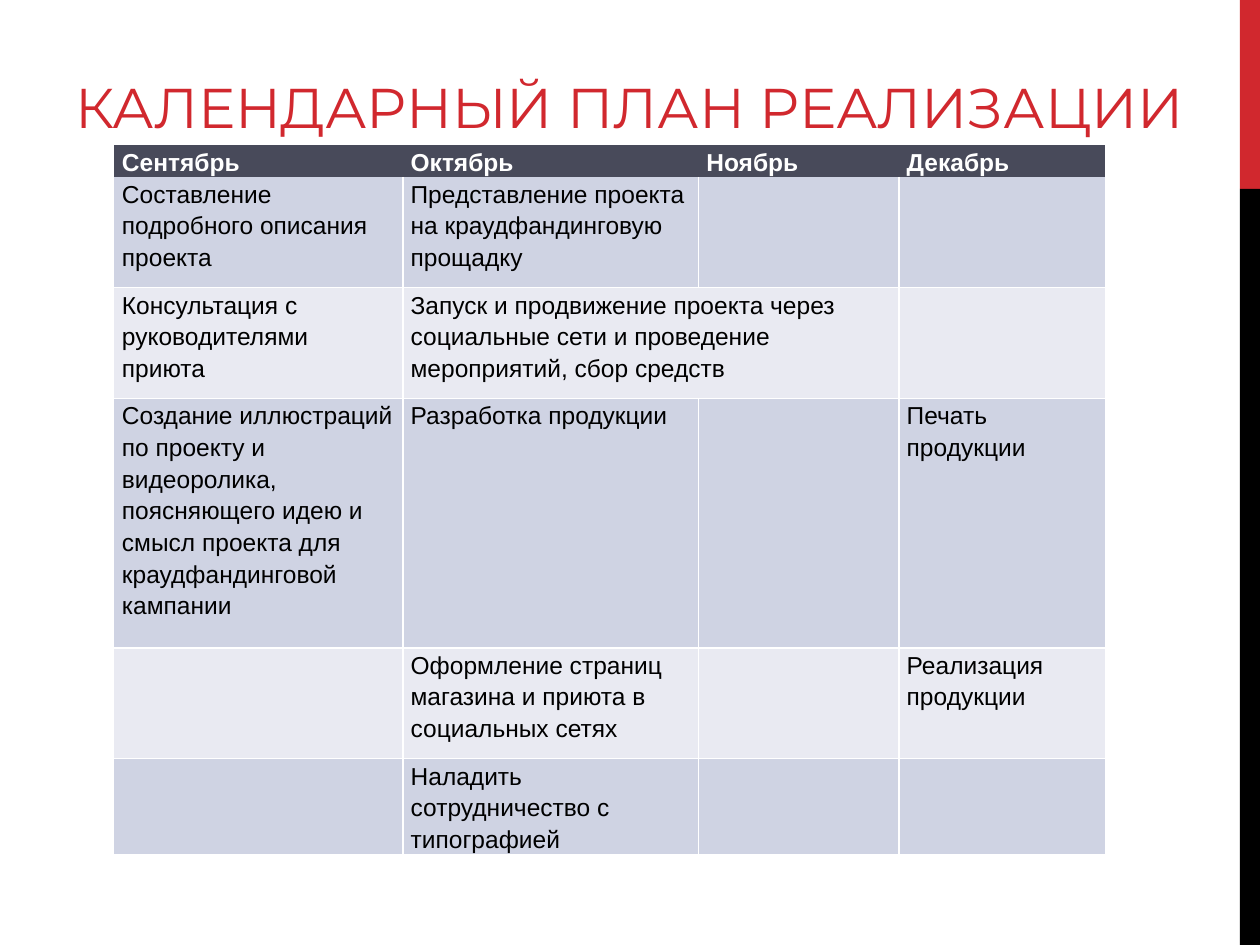
import pptx
import pptx.dml.color
import pptx.enum.shapes
import pptx.enum.text
import pptx.oxml
import pptx.oxml.ns
import pptx.util

Pt = pptx.util.Pt
Rgb = pptx.dml.color.RGBColor.from_string
Enum = pptx.enum.text

THEME = {
    "red": "D1282E", "black": "000000", "white": "FFFFFF",
    "head": "484A5A", "bands": ("CFD3E3", "E9EAF2"),
    "title": {"name": "Montserrat", "size": Pt(32), "bold": False},
    "top": {"name": "Arial", "size": Pt(14), "bold": True},
    "body": {"name": "Arial", "size": Pt(14), "bold": False},
}
PLAIN = "{2D5ABB26-0587-4C30-8999-92F81FD0307C}"  # table style without grid

COLS = (165, 169, 114.5, 118)
ROWS = (18.3, 63.3, 63.3, 142.6, 63.3, 54.3)
PLAN = (
    ("Сентябрь", "Октябрь", "Ноябрь", "Декабрь"),
    ("Составление подробного описания проекта",
     "Представление проекта на краудфандинговую прощадку", "", ""),
    ("Консультация с руководителями приюта",
     "Запуск и продвижение проекта через социальные сети и проведение "
     "мероприятий, сбор средств", "", ""),
    ("Создание иллюстраций по проекту и видеоролика, поясняющего идею и "
     "смысл проекта для краудфандинговой кампании",
     "Разработка продукции", "", "Печать продукции"),
    ("", "Оформление страниц магазина и приюта в социальных сетях", "",
     "Реализация продукции"),
    ("", "Наладить сотрудничество с типографией", "", ""),
)


def put(item, form):
    for key, value in form.items():
        setattr(item, key, value)


class Page:
    def __init__(self, slide, theme):
        self.slide, self.theme = slide, theme

    def label(self, frame, text, font, color, form):
        par = frame.paragraphs[0]
        put(par, form)
        run = par.add_run()
        run.text = text
        put(run.font, self.theme[font])
        run.font.color.rgb = Rgb(self.theme[color])

    def block(self, box, color):
        kind = pptx.enum.shapes.MSO_SHAPE.RECTANGLE
        shape = self.slide.shapes.add_shape(kind, *map(Pt, box))
        shape.shadow.inherit = False
        shape.fill.solid()
        shape.fill.fore_color.rgb = Rgb(self.theme[color])
        shape.line.fill.background()

    def title(self, box, text):
        frame = self.slide.shapes.add_textbox(*map(Pt, box)).text_frame
        put(frame, {"word_wrap": True,
                    "vertical_anchor": Enum.MSO_ANCHOR.BOTTOM})
        self.label(frame, text, "title", "red",
                   {"alignment": Enum.PP_ALIGN.CENTER})

    def edge(self, cell, sides):
        props = cell._tc.get_or_add_tcPr()
        for spot, side in enumerate(sides):
            line = pptx.oxml.parse_xml(
                f'<a:ln{side} {pptx.oxml.ns.nsdecls("a")} w="{Pt(1)}">'
                f'<a:solidFill><a:srgbClr val="{self.theme["white"]}"/>'
                f'</a:solidFill></a:ln{side}>')
            props.insert(spot, line)

    def cell(self, cell, text, color, font, ink):
        cell.fill.solid()
        cell.fill.fore_color.rgb = Rgb(color)
        put(cell, {"margin_left": Pt(4.5), "margin_right": Pt(4.5),
                   "margin_top": 0, "margin_bottom": 0})
        if text:
            self.label(cell.text_frame, text, font, ink,
                       {"line_spacing": 1.15})

    def table(self, spot, cols, rows, data, spans):
        size = (sum(cols), sum(rows))
        frame = self.slide.shapes.add_table(
            len(rows), len(cols), *map(Pt, spot + size))
        table = frame.table
        style = table._tbl.tblPr.find(pptx.oxml.ns.qn("a:tableStyleId"))
        style.text = PLAIN
        for col, width in zip(table.columns, cols):
            col.width = Pt(width)
        for row, height in zip(table.rows, rows):
            row.height = Pt(height)
        for start, end in spans:
            table.cell(*start).merge(table.cell(*end))
        for r, line in enumerate(data):
            for c, text in enumerate(line):
                cell = table.cell(r, c)
                if r == 0:
                    self.cell(cell, text, self.theme["head"], "top", "white")
                    continue
                band = self.theme["bands"][(r - 1) % 2]
                self.cell(cell, text, band, "body", "black")
                # Only inner borders of the body are drawn
                inner = {"L": c > 0, "R": c < len(cols) - 1,
                         "T": r > 1, "B": r < len(rows) - 1}
                self.edge(cell, [side for side, on in inner.items() if on])


def main():
    deck = pptx.Presentation()
    put(deck, {"slide_width": Pt(720), "slide_height": Pt(540)})
    page = Page(deck.slides.add_slide(deck.slide_layouts[6]), THEME)

    # Side stripe
    page.block((708.5, 0, 11.5, 108), "red")
    page.block((708.5, 108, 11.5, 432), "black")

    # Calendar, with one task across two months
    page.table((65.2, 82.8), COLS, ROWS, PLAN, [((2, 1), (2, 2))])

    # Title
    page.title((0, -24.5, 720, 108), "КАЛЕНДАРНЫЙ ПЛАН РЕАЛИЗАЦИИ")

    deck.save("out.pptx")


if __name__ == "__main__":
    main()
